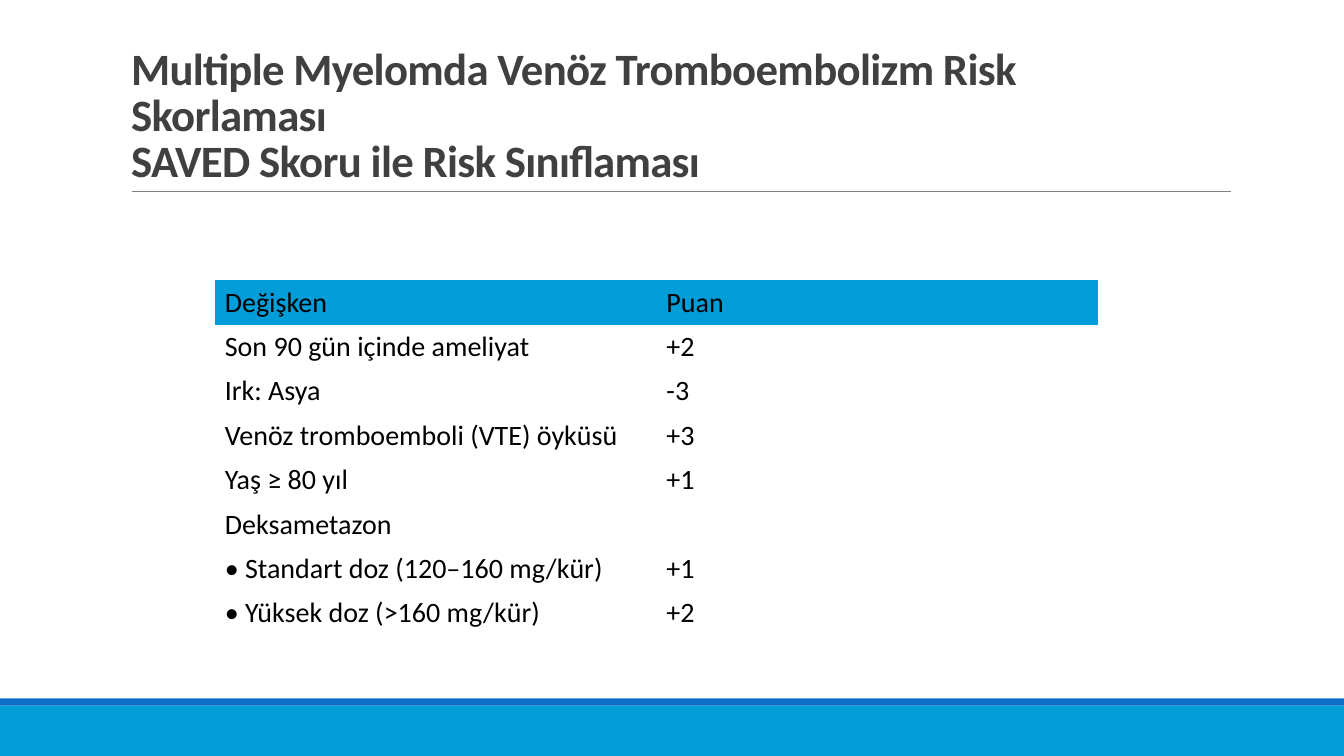
from lxml.etree import SubElement
from pptx import Presentation
from pptx.dml.color import RGBColor
from pptx.enum.shapes import MSO_CONNECTOR, MSO_SHAPE
from pptx.enum.text import MSO_ANCHOR, MSO_AUTO_SIZE, PP_ALIGN
from pptx.oxml.ns import qn
from pptx.util import Inches, Pt

# Content
TITLE_LINES = [
    "Multiple Myelomda Venöz Tromboembolizm Risk Skorlaması",
    "SAVED Skoru ile Risk Sınıflaması",
]
SCORE_ROWS = [
    ("Değişken", "Puan"),
    ("Son 90 gün içinde ameliyat", "+2"),
    ("Irk: Asya", "-3"),
    ("Venöz tromboemboli (VTE) öyküsü", "+3"),
    ("Yaş ≥ 80 yıl", "+1"),
    ("Deksametazon", ""),
    ("• Standart doz (120–160 mg/kür)", "+1"),
    ("• Yüksek doz (>160 mg/kür)", "+2"),
]

# Look
FONT = "Calibri"
CYAN = RGBColor(0x00, 0x9D, 0xD9)
BLUE = RGBColor(0x0F, 0x6F, 0xC6)
RULE_GRAY = RGBColor(0x80, 0x80, 0x80)
TITLE_GRAY = RGBColor(0x40, 0x40, 0x40)
BLACK = RGBColor(0x00, 0x00, 0x00)
PLAIN_TABLE_STYLE = "{2D5ABB26-0587-4C30-8999-92F81FD0307C}"

# Layout in inches
WIDTH, HEIGHT = 13.33, 7.5
FOOTER_BANDS = [(7, 0.5, CYAN), (6.93, 0.07, BLUE)]
RULE_LEFT, RULE_RIGHT, RULE_TOP = 1.31, 12.21, 1.9
TABLE_LEFT, TABLE_TOP = 2.13, 2.78
COLUMN_WIDTH, ROW_HEIGHT = 4.38, 0.44


def format_font(font, size, color, bold=False):
    font.name = FONT
    font.size = Pt(size)
    font.bold = bold
    font.color.rgb = color


def add_footer(slide):
    for top, height, color in FOOTER_BANDS:
        band = slide.shapes.add_shape(
            MSO_SHAPE.RECTANGLE, 0, Inches(top), Inches(WIDTH), Inches(height))
        band.shadow.inherit = False
        band.fill.solid()
        band.fill.fore_color.rgb = color
        band.line.fill.background()


def add_title(slide):
    # Thin rule under the title
    rule = slide.shapes.add_connector(
        MSO_CONNECTOR.STRAIGHT, Inches(RULE_LEFT), Inches(RULE_TOP),
        Inches(RULE_RIGHT), Inches(RULE_TOP))
    rule.line.color.rgb = RULE_GRAY
    rule.line.width = Pt(0.5)
    SubElement(rule._element.spPr, qn("a:effectLst"))

    title = slide.shapes.title
    title.left, title.top = Inches(1.2), Inches(0.31)
    title.width, title.height = Inches(11), Inches(1.59)
    text_frame = title.text_frame
    text_frame.text = "\v".join(TITLE_LINES)
    text_frame.word_wrap = True
    text_frame.auto_size = MSO_AUTO_SIZE.NONE
    text_frame.vertical_anchor = MSO_ANCHOR.BOTTOM
    paragraph = text_frame.paragraphs[0]
    paragraph.alignment = PP_ALIGN.LEFT
    paragraph.line_spacing = 0.85
    for run in paragraph.runs:
        format_font(run.font, 32, TITLE_GRAY, bold=True)
        run.font._element.set("spc", "-50")


def add_score_table(slide):
    row_count, column_count = len(SCORE_ROWS), len(SCORE_ROWS[0])
    table = slide.shapes.add_table(
        row_count, column_count, Inches(TABLE_LEFT), Inches(TABLE_TOP),
        Inches(COLUMN_WIDTH * column_count), Inches(ROW_HEIGHT * row_count)).table
    table.horz_banding = False
    table._tbl.tblPr.find(qn("a:tableStyleId")).text = PLAIN_TABLE_STYLE

    for row_index, row in enumerate(SCORE_ROWS):
        for column_index, text in enumerate(row):
            cell = table.cell(row_index, column_index)
            cell.text_frame.text = text
            cell.vertical_anchor = MSO_ANCHOR.MIDDLE
            if row_index == 0:
                cell.fill.solid()
                cell.fill.fore_color.rgb = CYAN
            else:
                cell.fill.background()
            for run in cell.text_frame.paragraphs[0].runs:
                format_font(run.font, 20, BLACK)


def main():
    presentation = Presentation()
    presentation.slide_width = Inches(WIDTH)
    presentation.slide_height = Inches(HEIGHT)
    title_only = presentation.slide_layouts[5]
    slide = presentation.slides.add_slide(title_only)
    add_footer(slide)
    add_title(slide)
    add_score_table(slide)
    presentation.save("out.pptx")


if __name__ == "__main__":
    main()
